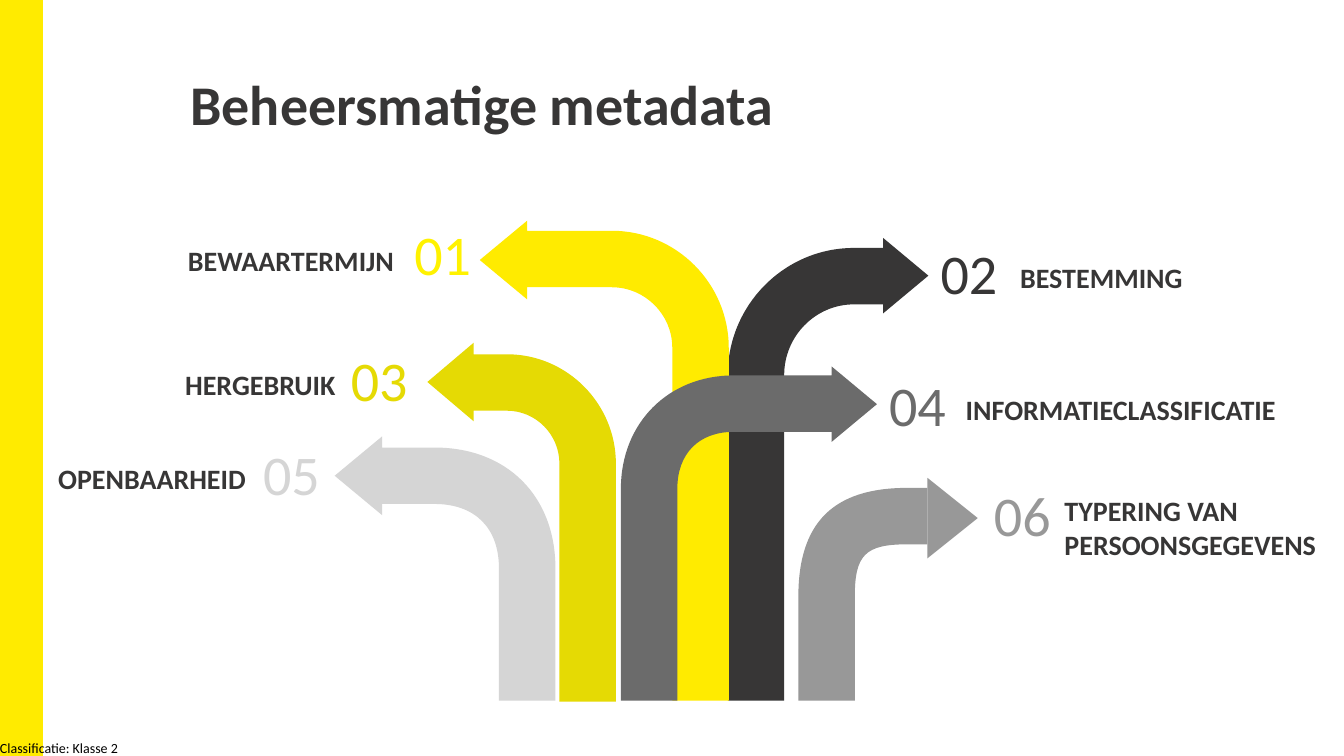
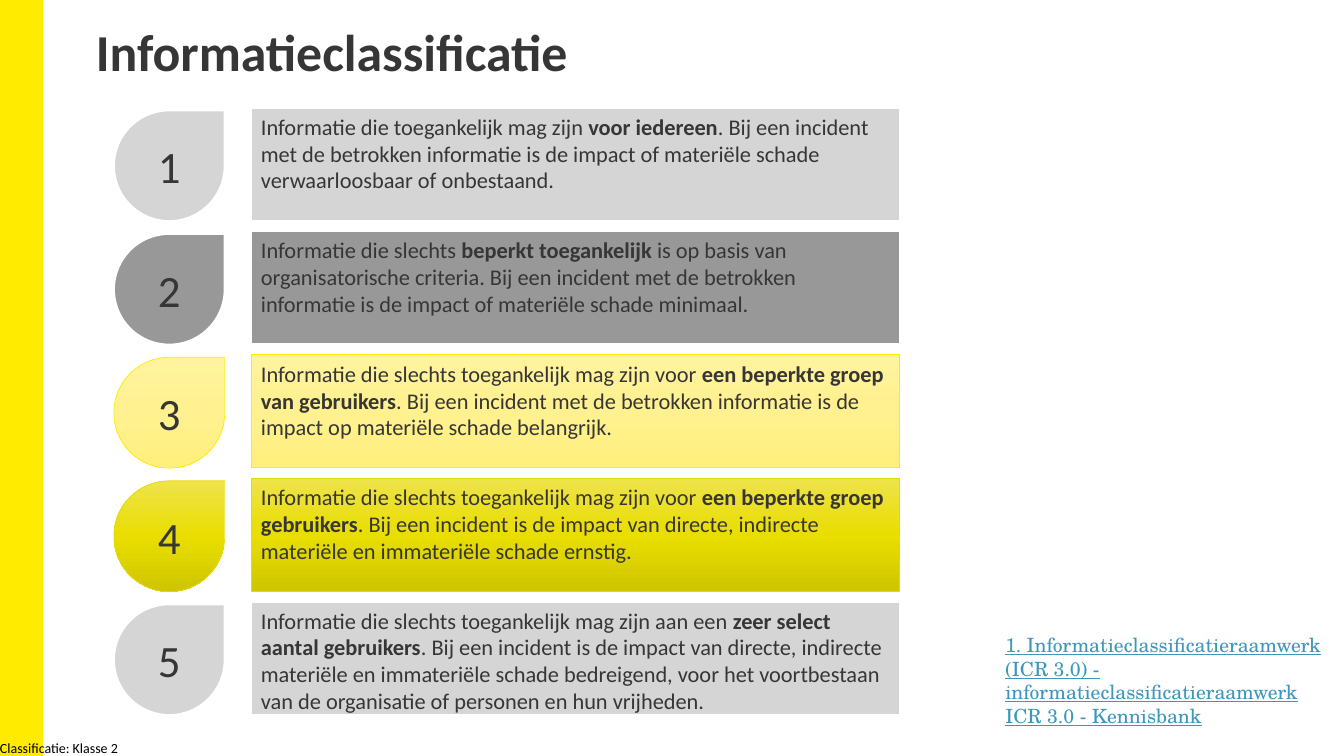
from dataclasses import dataclass
from typing import Optional

import pptx
import pptx.dml.color
import pptx.enum.shapes
import pptx.enum.text
import pptx.oxml.ns
import pptx.util
from lxml import etree

# Grid: square cells of a tenth of an inch
CELL = 91440
COLS, ROWS = 133.33, 75

FONT, LINK_FONT = "Calibri", "TeX Gyre Schola"
INK, BLACK, WHITE = "373636", "000000", "FFFFFF"
YELLOW, OLIVE = "FFEB00", "E5DA04"
LIGHT, MID, DARK = "D5D5D5", "989898", "6B6B6B"
LINK = "3C96BE"

ALIGN = pptx.enum.text.PP_ALIGN
ANCHOR = pptx.enum.text.MSO_ANCHOR
SHAPE = pptx.enum.shapes.MSO_SHAPE
qn = pptx.oxml.ns.qn


@dataclass
class Arrow:
    color: str
    stem: float            # outer edge of the stem
    top: float             # upper edge of the bar
    bend_x: float          # where the bar starts to bend
    bend_y: float          # where the bend meets the stem
    head: float            # base of the arrowhead
    tip: float
    tip_y: float
    number: str
    num_x: float
    num_y: float
    label: str
    label_x: float
    label_w: float = 21.8
    label_drop: float = 1.9
    half_head: float = 3.9
    outer_pull: float = 0.55
    inner_pull: float = 0.55
    foot: float = 69.5
    num_color: Optional[str] = None
    loose_head: bool = False


@dataclass
class Level:
    lead: str
    strong: str
    rest: str
    fill: tuple[str, ...]
    line: str = WHITE
    weight: float = 1.5


ARROWS = [
    Arrow(INK, 72.2, 24.6, 84.7, 37.2, 87.6, 92.1, 27.35, "02", 92.9, 23.25, "BESTEMMING",
          101.2, half_head=3.75, loose_head=True),
    Arrow(OLIVE, 61.1, 35.15, 50.3, 46, 47, 42.4, 37.9, "03", 34.4, 33.85, "HERGEBRUIK", 11.5,
          foot=69.6),
    Arrow(YELLOW, 72.3, 22.9, 60.7, 34.5, 52.3, 47.6, 25.8, "01", 40.7, 21.4, "BEWAARTERMIJN",
          17.3, label_drop=2.1, num_color="FFF200"),
    Arrow(MID, 79.2, 48.4, 90, 59.2, 92, 97, 51.4, "06", 98.2, 47.3,
          "TYPERING VAN PERSOONSGEGEVENS", 105.6, 25.9, 1, 4, 0.68, 0.8, loose_head=True),
    Arrow(DARK, 61.6, 37.25, 72.8, 48.5, 82.5, 87, 40.1, "04", 87.8, 36.3,
          "INFORMATIECLASSIFICATIE", 95.8, 32.9, half_head=3.75, outer_pull=0.58,
          inner_pull=0.62),
    Arrow(LIGHT, 55.1, 44.4, 43.1, 56.4, 37.9, 33.2, 47.2, "05", 25.7, 43.15, "OPENBAARHEID",
          2.6, outer_pull=0.6, inner_pull=0.63),
]

OPEN = "Informatie die slechts toegankelijk mag zijn "
LEVELS = [
    Level("Informatie die toegankelijk mag zijn ", "voor iedereen",
          ". Bij een incident met de betrokken informatie is de impact of materiële schade "
          "verwaarloosbaar of onbestaand.", (LIGHT,)),
    Level("Informatie die slechts ", "beperkt toegankelijk ",
          "is op basis van organisatorische criteria. Bij een incident met de betrokken "
          "informatie is de impact of materiële schade minimaal.", (MID,)),
    Level(OPEN + "voor ", "een beperkte groep van gebruikers",
          ". Bij een incident met de betrokken informatie is de impact op materiële schade "
          "belangrijk.", ("FFF39E", "FFF190", "FFF07C"), YELLOW, 0.5),
    Level(OPEN + "voor ", "een beperkte groep gebruikers",
          ". Bij een incident is de impact van directe, indirecte materiële en immateriële "
          "schade ernstig.", ("EEE34B", "E9DE00", "CFC500"), OLIVE, 0.5),
    Level(OPEN + "aan een ", "zeer select aantal gebruikers",
          ". Bij een incident is de impact van directe, indirecte materiële en immateriële "
          "schade bedreigend, voor het voortbestaan van de organisatie of personen en hun "
          "vrijheden.", (LIGHT,)),
]


def g(cells: float) -> int:
    return round(cells * CELL)


def rgb(color: str) -> pptx.dml.color.RGBColor:
    return pptx.dml.color.RGBColor.from_string(color)


def style(p, size: float, color: str = INK, bold: Optional[bool] = None,
          align=ALIGN.LEFT, name: str = FONT) -> None:
    p.alignment = align
    p.font.name, p.font.size, p.font.bold = name, pptx.util.Pt(size), bold
    p.font.color.rgb = rgb(color)


def set_insets(tf, left: float, top: float, right: float, bottom: float) -> None:
    tf.margin_left, tf.margin_top = g(left), g(top)
    tf.margin_right, tf.margin_bottom = g(right), g(bottom)


def paint(sp, fill: tuple[str, ...], line: Optional[str] = None, weight: float = 1) -> None:
    """One colour gives a solid fill, several a gradient from top to bottom."""
    sp.shadow.inherit = False
    if len(fill) == 1:
        sp.fill.solid()
        sp.fill.fore_color.rgb = rgb(fill[0])
    else:
        sp.fill.gradient()
        sp.fill.gradient_angle = 270
        stops = sp.element.spPr.find(".//" + qn("a:gsLst"))
        for old in list(stops):
            stops.remove(old)
        for i, color in enumerate(fill):
            stop = etree.SubElement(stops, qn("a:gs"), pos=str(100000 * i // (len(fill) - 1)))
            etree.SubElement(stop, qn("a:srgbClr"), val=color)
    if line is None:
        sp.line.fill.background()
    else:
        sp.line.color.rgb = rgb(line)
        sp.line.width = pptx.util.Pt(weight)


def add_box(slide, kind, x: float, y: float, w: float, h: float):
    return slide.shapes.add_shape(kind, g(x), g(y), g(w), g(h))


def add_text(slide, text: str, x: float, y: float, w: float, h: float,
             insets=(0, 0, 0, 0), wrap: bool = True, anchor=ANCHOR.TOP, **font):
    sp = slide.shapes.add_textbox(g(x), g(y), g(w), g(h))
    tf = sp.text_frame
    tf.word_wrap, tf.vertical_anchor = wrap, anchor
    set_insets(tf, *insets)
    tf.text = text
    style(tf.paragraphs[0], **font)
    return sp


def add_title(slide, text: str, x: float, y: float, w: float, size: float) -> None:
    sp = slide.shapes.title
    sp.left, sp.top, sp.width, sp.height = g(x), g(y), g(w), g(12.2)
    tf = sp.text_frame
    tf.text = text
    tf.word_wrap, tf.vertical_anchor = True, ANCHOR.TOP
    tf.auto_size = pptx.enum.text.MSO_AUTO_SIZE.NONE
    set_insets(tf, 0, 0, 0, 0)
    p = tf.paragraphs[0]
    style(p, size, bold=True)
    p.line_spacing = pptx.util.Pt(38)


def add_frame(slide) -> None:
    """Put the side band and the footer on the slide's layout."""
    band = add_box(slide, SHAPE.RECTANGLE, 0, 0, 4.2, ROWS)
    paint(band, (YELLOW,), YELLOW)
    footer = add_text(slide, "Classificatie: Klasse 2", 0, 73.35, 12, 1.7, wrap=False,
                      size=10, color=BLACK)
    tree = slide.slide_layout.shapes.element
    for new_id, sp in enumerate((band, footer), start=101):
        sp.element.nvSpPr.cNvPr.set("id", str(new_id))
        tree.append(sp.element)


def add_outline(shapes, points: list[tuple[float, float]], color: str,
                curves: tuple[int, ...] = ()) -> None:
    """Draw a closed outline; each curve bends through the three points from that index."""
    outline = [(g(x), g(y)) for x, y in points]
    builder = shapes.build_freeform(*outline[0])
    builder.add_line_segments(outline[1:], close=True)
    sp = builder.convert_to_shape()
    paint(sp, (color,))
    steps = list(sp.element.spPr.iter(qn("a:lnTo")))
    for first in curves:
        trio = steps[first - 1:first + 2]
        curve = etree.Element(qn("a:cubicBezTo"))
        trio[0].addprevious(curve)
        for step in trio:
            curve.append(step[0])
            step.getparent().remove(step)


def bend(start, end, pull: float) -> list[tuple[float, float]]:
    """Start, two handles and end of a curve that leaves level and arrives upright."""
    (x0, y0), (x1, y1) = start, end
    return [start, (x0 + (x1 - x0) * pull, y0), (x1, y1 + (y0 - y1) * pull), end]


def add_arrow(slide, a: Arrow) -> None:
    thick = 5.6
    inner = a.stem + (thick if a.tip > a.stem else -thick)
    low = a.top + thick
    bar = [
        (a.head, a.top),
        *bend((a.bend_x, a.top), (a.stem, a.bend_y), a.outer_pull),
        (a.stem, a.foot), (inner, a.foot),
        *reversed(bend((a.bend_x, low), (inner, a.bend_y), a.inner_pull)),
        (a.head, low),
    ]
    head = [(a.head, a.tip_y + a.half_head), (a.tip, a.tip_y), (a.head, a.tip_y - a.half_head)]
    curves = (2, 8)
    if a.loose_head:
        shapes = slide.shapes.add_group_shape().shapes
        add_outline(shapes, bar, a.color, curves)
        add_outline(shapes, head, a.color)
    else:
        add_outline(slide.shapes, bar + head, a.color, curves)


def add_arrow_text(slide, a: Arrow) -> None:
    add_text(slide, a.number, a.num_x, a.num_y, 6.5, 7.5, (0.4, 0.4, 0.4, 0.4), False,
             ANCHOR.MIDDLE, size=40, color=a.num_color or a.color)
    add_text(slide, a.label, a.label_x, a.num_y + a.label_drop, a.label_w, 4, (0, 0.7, 0, 0),
             size=20, bold=True, align=ALIGN.RIGHT if a.tip < a.stem else ALIGN.LEFT)


def add_level(slide, i: int, level: Level) -> None:
    y = 10.7 + 12.25 * i
    # Numbered drop
    drop = add_box(slide, SHAPE.TEAR, 11.3, y + 0.25, 11, 11)
    drop.text_frame.text = str(i + 1)
    drop.text_frame.vertical_anchor = ANCHOR.MIDDLE
    style(drop.text_frame.paragraphs[0], 32, align=ALIGN.CENTER)
    # Description
    panel = add_box(slide, SHAPE.RECTANGLE, 24.9, y, 64.35, 11.2)
    tf = panel.text_frame
    tf.word_wrap, tf.vertical_anchor = True, ANCHOR.TOP
    p = tf.paragraphs[0]
    style(p, 16)
    for text in (level.lead, level.strong, level.rest):
        r = p.add_run()
        r.text = text
        if text == level.strong:
            r.font.bold = True
    for sp in (drop, panel):
        paint(sp, level.fill, level.line, level.weight)


def main() -> None:
    prs = pptx.Presentation()
    prs.slide_width, prs.slide_height = g(COLS), g(ROWS)
    layout = prs.slide_layouts[5]

    # Slide 1: metadata arrows
    slide = prs.slides.add_slide(layout)
    add_frame(slide)
    add_title(slide, "Beheersmatige metadata", 18.9, 8.3, 108.1, 40)
    for a in ARROWS:
        add_arrow(slide, a)
    for a in ARROWS:
        add_arrow_text(slide, a)

    # Slide 2: classification levels
    slide = prs.slides.add_slide(layout)
    add_title(slide, "Informatieclassificatie", 9.5, 2.85, 123.8, 37)
    for i, level in enumerate(LEVELS):
        add_level(slide, i, level)
    source = add_text(slide, "1. Informatieclassificatieraamwerk (ICR 3.0) - "
                      "informatieclassificatieraamwerk ICR 3.0 - Kennisbank",
                      98.75, 62.3, 33.45, 10.4, (1, 0.5, 1, 0.5),
                      size=14, color=LINK, name=LINK_FONT)
    source.text_frame.paragraphs[0].font.underline = True

    prs.save("out.pptx")


if __name__ == "__main__":
    main()
